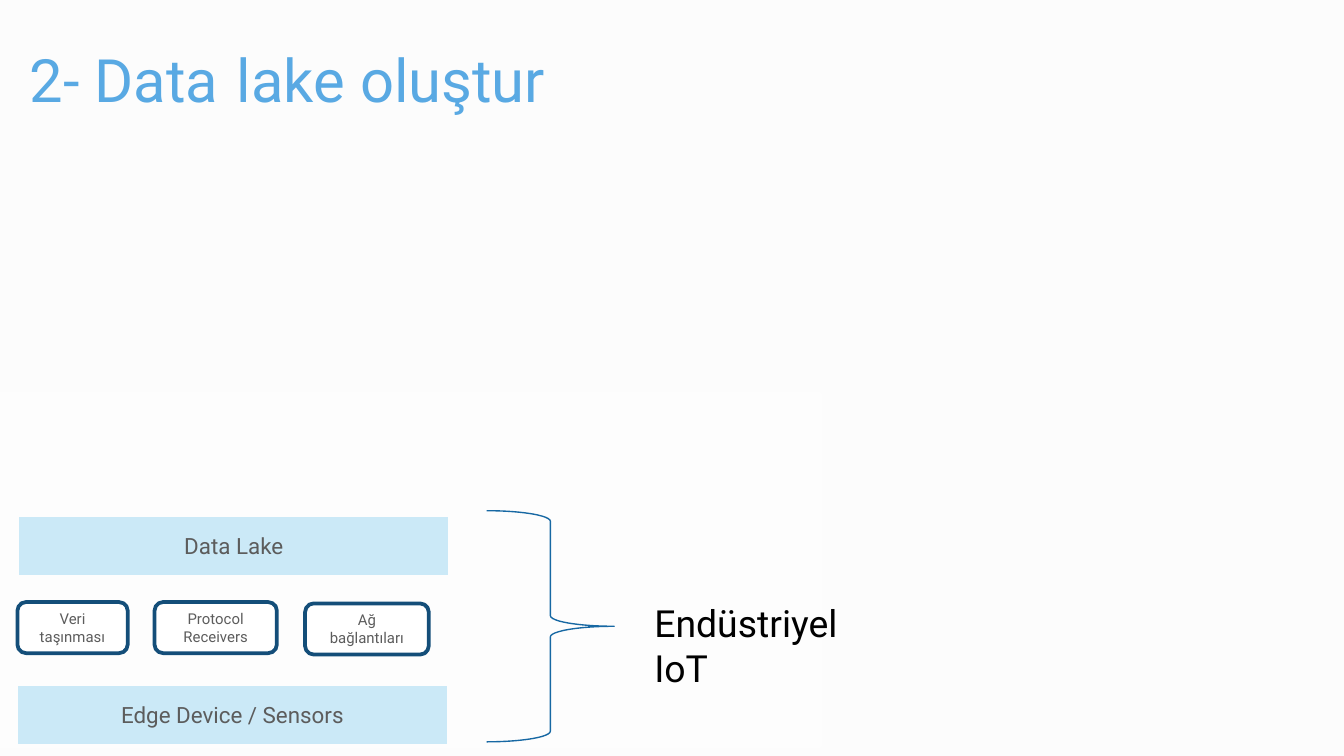
"""Build the data lake slide with its industrial IoT layers."""
import pptx
import pptx.util
import pptx.dml.color
import pptx.enum.shapes
import pptx.enum.text

Inches = pptx.util.Inches
Pt = pptx.util.Pt
SHAPE = pptx.enum.shapes.MSO_SHAPE
ANCHOR = pptx.enum.text.MSO_ANCHOR
ALIGN = pptx.enum.text.PP_ALIGN
COLORS = {
    "background": "FCFCFC",
    "panel": "FDFDFD",
    "title": "59A9E3",
    "layer": "CBE9F7",
    "service": "FFFFFF",
    "outline": "144E79",
    "brace": "1768A3",
    "label": "5C5C5C",
    "black": "000000",
}


def add_run(paragraph, text, size, color, font="Roboto"):
    run = paragraph.add_run()
    run.text = text
    run.font.size = Pt(size)
    run.font.name = font
    run.font.bold = False
    run.font.color.rgb = pptx.dml.color.RGBColor.from_string(COLORS[color])


def add_block(kind, box, fill, line, width=2, text="", size=12):
    block = slide.shapes.add_shape(kind, *map(Inches, box))
    block.shadow.inherit = False
    if fill:
        block.fill.solid()
        block.fill.fore_color.rgb = pptx.dml.color.RGBColor.from_string(COLORS[fill])
    else:
        block.fill.background()
    block.line.color.rgb = pptx.dml.color.RGBColor.from_string(COLORS[line])
    block.line.width = Pt(width)
    if text:
        block.text_frame.word_wrap = True
        block.text_frame.vertical_anchor = ANCHOR.MIDDLE
        paragraph = block.text_frame.paragraphs[0]
        paragraph.alignment = ALIGN.CENTER
        add_run(paragraph, text, size, "label")


deck = pptx.Presentation()
deck.slide_width = Inches(10)
deck.slide_height = Inches(10 * 9 / 16)
slide = deck.slides.add_slide(deck.slide_layouts[5])
slide.background.fill.solid()
slide.background.fill.fore_color.rgb = pptx.dml.color.RGBColor.from_string(COLORS["background"])

title = slide.shapes.title
title.left, title.top, title.width, title.height = map(Inches, (0.12, 0.27, 4.12, 0.64))
title.text_frame.auto_size = pptx.enum.text.MSO_AUTO_SIZE.NONE
title.text_frame.word_wrap = True
title.text_frame.vertical_anchor = ANCHOR.TOP
heading = title.text_frame.paragraphs[0]
heading.alignment = ALIGN.LEFT
add_run(heading, "2- Data ", 32, "title")
add_run(heading, " ", 7, "black", "Arial")
add_run(heading, "lake oluştur", 32, "title")

add_block(SHAPE.RECTANGLE, (0, 2.93, 6.1, 2.62), "panel", "panel")

scope = slide.shapes.add_textbox(Inches(4.77), Inches(4.42), Inches(2.02), Inches(0.44))
scope.text_frame.word_wrap = True
add_run(scope.text_frame.paragraphs[0], "Endüstriyel IoT", 20, "black")

add_block(SHAPE.RIGHT_BRACE, (3.62, 3.8, 0.95, 1.72), None, "brace", 0.75)
add_block(SHAPE.RECTANGLE, (0.13, 3.83, 3.22, 1.7), "panel", "panel")

for layer, left, top in (("Data Lake", 0.13, 3.83), ("Edge Device / Sensors", 0.12, 5.09)):
    add_block(SHAPE.RECTANGLE, (left, top, 3.22, 0.46), "layer", "panel", text=layer)

services = (
    ("Veri taşınması", 0.13, 4.48, 0.82),
    ("Protocol Receivers", 1.15, 4.48, 0.91),
    ("Ağ bağlantıları", 2.27, 4.49, 0.92),
)
for service, left, top, width in services:
    add_block(SHAPE.ROUNDED_RECTANGLE, (left, top, width, 0.38), "service", "outline",
              text=service, size=8)

deck.save("out.pptx")
